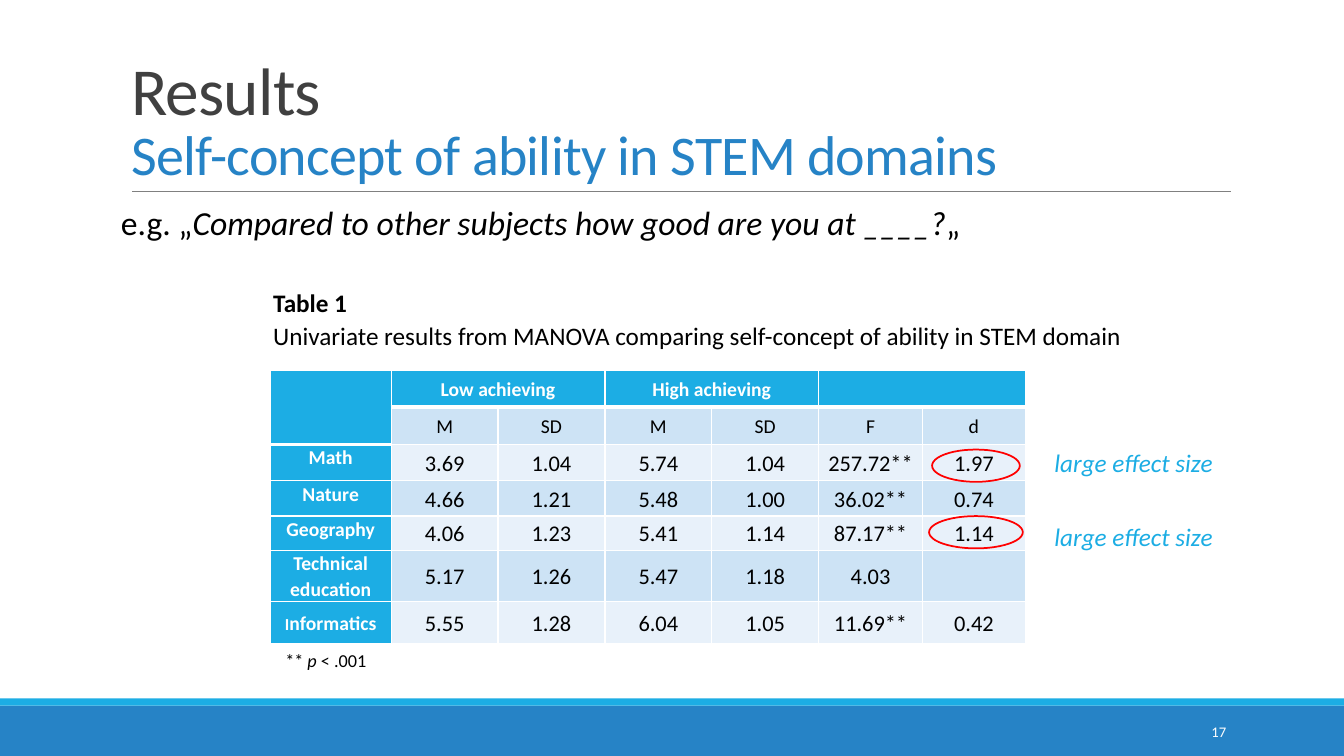
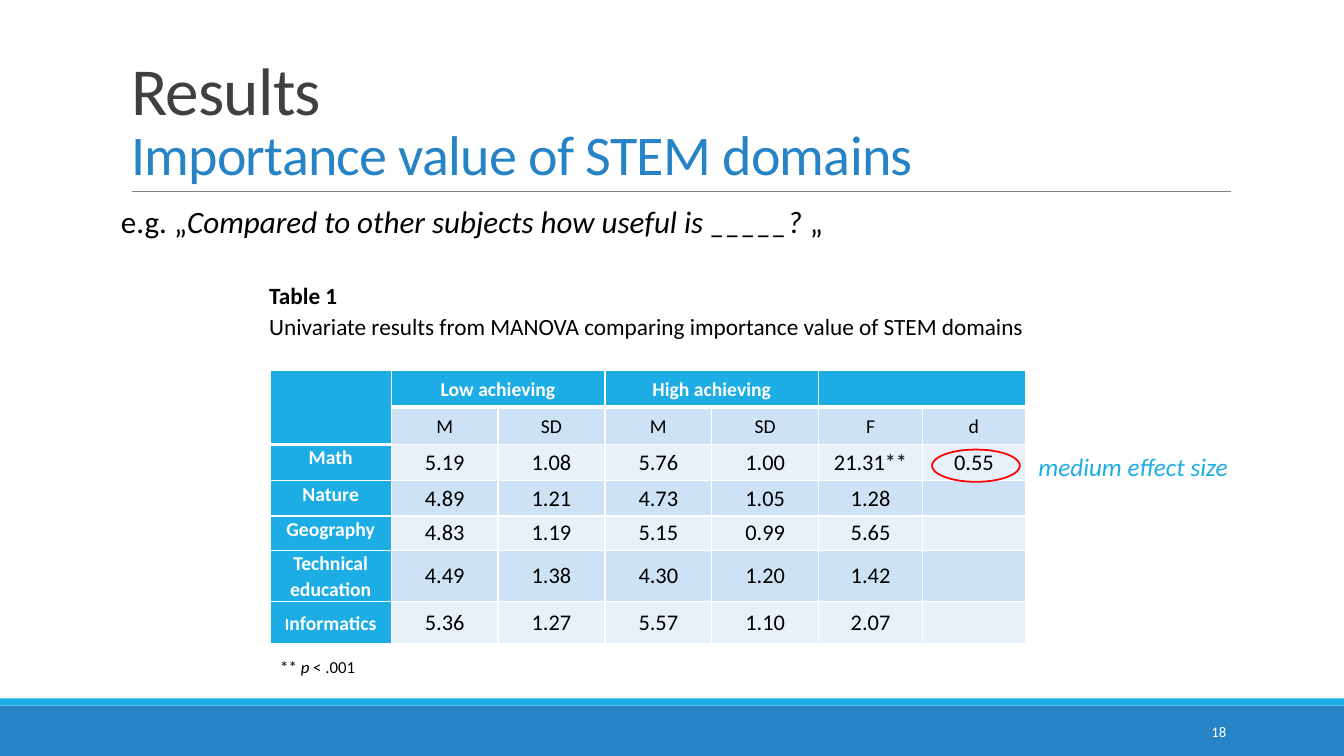
from lxml import etree
from pptx import Presentation
from pptx.dml.color import RGBColor
from pptx.enum.shapes import MSO_CONNECTOR, MSO_SHAPE
from pptx.enum.text import MSO_ANCHOR, MSO_AUTO_SIZE, PP_ALIGN
from pptx.oxml.ns import qn
from pptx.util import Inches, Pt

RECTANGLE, ELLIPSE = MSO_SHAPE.RECTANGLE, MSO_SHAPE.OVAL
STRAIGHT = MSO_CONNECTOR.STRAIGHT
TOP, MIDDLE, BOTTOM = MSO_ANCHOR.TOP, MSO_ANCHOR.MIDDLE, MSO_ANCHOR.BOTTOM
LEFT, CENTER, RIGHT = PP_ALIGN.LEFT, PP_ALIGN.CENTER, PP_ALIGN.RIGHT

# Shared style
FONT = "Calibri"
BLACK, WHITE, DARK, GREY, RED = "000000", "FFFFFF", "404040", "808080", "FF0000"
BLUE, CYAN, PALE, PALER = "2683C6", "1CADE4", "CDE3F5", "E8F1FA"
WIDTH, HEIGHT = 13.33, 7.5
BODY_LEFT = 1.2

# Table grid
TABLE_LEFT, TABLE_TOP = 2.68, 3.67
COLUMNS = [1.2, 1.06, 1.06, 1.06, 1.06, 1.03, 1.02]
ROWS = [0.37, 0.37, 0.36, 0.35, 0.34, 0.51, 0.42]
GROUPS = ["", "Low achieving", "", "High achieving", "", "", ""]
MEASURES = ["", "M", "SD", "M", "SD", "F", "d"]
DOMAINS = ["Math", "Nature", "Geography", "Technical education", "Informatics"]
RING_CENTER, RING_HEIGHT = 9.68, 0.32

RESULTS = [
    dict(
        number="17",
        subtitle="Self-concept of ability in STEM domains",
        question=("Compared to other subjects how good are you at ____?", "„"),
        caption="Univariate results from MANOVA comparing self-concept of ability in STEM domain",
        sizes=(24, 18, 13), caption_gap=30, caption_indent=1.51,
        footnote=(2.83, 6.4), spacing=1.07,
        values=["3.69 1.04 5.74 1.04 257.72** 1.97",
                "4.66 1.21 5.48 1.00 36.02** 0.74",
                "4.06 1.23 5.41 1.14 87.17** 1.14",
                "5.17 1.26 5.47 1.18 4.03",
                "5.55 1.28 6.04 1.05 11.69** 0.42"],
        rings=[(4.46, 0.87), (5.12, 0.93)],
        effects=[("large effect size", 10.36, 4.39),
                 ("large effect size", 10.36, 5.12)],
    ),
    dict(
        number="18",
        subtitle="Importance value of STEM domains",
        question=("Compared to other subjects how useful is _____? ", "„"),
        caption="Univariate results from MANOVA comparing importance value of STEM domains",
        sizes=(22.2, 16.6, 12), caption_gap=28, caption_indent=1.47,
        footnote=(2.78, 6.47), spacing=1.0,
        values=["5.19 1.08 5.76 1.00 21.31** 0.55",
                "4.89 1.21 4.73 1.05 1.28",
                "4.83 1.19 5.15 0.99 5.65",
                "4.49 1.38 4.30 1.20 1.42",
                "5.36 1.27 5.57 1.10 2.07"],
        rings=[(4.46, 0.87)],
        effects=[("medium effect size", 10.2, 4.43)],
    ),
]


def color(value):
    return RGBColor.from_string(value)


def place(shape, left, top, width, height):
    shape.left, shape.top = Inches(left), Inches(top)
    shape.width, shape.height = Inches(width), Inches(height)


def write(para, text, size=18, fill=BLACK, bold=False, italic=False, tracking=None):
    """Add a formatted span of text to a paragraph."""
    span = para.add_run()
    span.text = text
    font = span.font
    font.name, font.size, font.bold, font.italic = FONT, Pt(size), bold, italic
    font.color.rgb = color(fill)
    if tracking is not None:
        font._element.set("spc", str(int(tracking * 100)))


def format_para(para, spacing=1.0, before=0, indent=0, align=LEFT):
    para.line_spacing, para.alignment = spacing, align
    para.space_before, para.space_after = Pt(before), Pt(0)
    properties = para._p.get_or_add_pPr()
    properties.set("marL", str(Inches(indent)))
    properties.set("indent", "0")
    etree.SubElement(properties, qn("a:buNone"))


def add_box(page, left, top, width, height, anchor=TOP, margin=0.1):
    """Add a text box and return its first paragraph."""
    box = page.shapes.add_textbox(*map(Inches, (left, top, width, height)))
    frame = box.text_frame
    frame.word_wrap, frame.vertical_anchor = True, anchor
    frame.margin_left = frame.margin_right = Inches(margin)
    return frame.paragraphs[0]


def add_figure(page, kind, left, top, width, height, fill=None, line=None):
    shape = page.shapes.add_shape(kind, *map(Inches, (left, top, width, height)))
    shape.shadow.inherit = False
    if fill:
        shape.fill.solid()
        shape.fill.fore_color.rgb = color(fill)
    else:
        shape.fill.background()
    if line:
        shape.line.color.rgb = color(line)
        shape.line.width = Pt(1.25)
    else:
        shape.line.fill.background()
    return shape


def add_rule(page, left, right, height):
    rule = page.shapes.add_connector(
        STRAIGHT, Inches(left), Inches(height), Inches(right), Inches(height))
    rule.line.color.rgb = color(GREY)
    rule.line.width = Pt(0.5)
    etree.SubElement(rule.element.spPr, qn("a:effectLst"))
    return rule


def set_up_layout(layout, page):
    """Give the layout its bands, title rule and placeholder frames."""
    title, body = layout.placeholders[0], layout.placeholders[1]
    place(title, BODY_LEFT, 0.31, 11.71, 1.59)
    place(body, BODY_LEFT, 2.03, 11, 4.94)
    title.text_frame.vertical_anchor = BOTTOM
    body.text_frame.vertical_anchor = TOP
    body.text_frame.margin_left = body.text_frame.margin_right = 0
    # Layouts cannot add shapes, so they are made on a page and moved
    parts = [
        add_figure(page, RECTANGLE, 0, 7, WIDTH, 0.5, fill=BLUE),
        add_figure(page, RECTANGLE, 0, 6.93, WIDTH, 0.07, fill=CYAN),
        add_rule(page, 1.31, 12.21, 1.9),
    ]
    for index, part in enumerate(parts):
        part.element.xpath(".//p:cNvPr")[0].set("id", str(20 + index))
        layout.shapes.element.append(part.element)


def fill_title(page, subtitle):
    frame = page.shapes.title.text_frame
    frame.auto_size, frame.vertical_anchor = MSO_AUTO_SIZE.NONE, BOTTOM
    para = frame.paragraphs[0]
    format_para(para, spacing=0.85)
    write(para, "Results", 48, DARK, tracking=-0.5)
    para.add_line_break()
    write(para, subtitle, 40, BLUE, tracking=-0.5)


def fill_body(page, result):
    question_size, caption_size, _ = result["sizes"]
    frame = page.placeholders[1].text_frame
    frame.auto_size = MSO_AUTO_SIZE.NONE
    para = frame.paragraphs[0]
    format_para(para, spacing=0.8)
    question, closing = result["question"]
    write(para, "e.g. „", question_size)
    write(para, question, question_size, italic=True)
    write(para, closing, question_size)
    for text, bold, gap in [("Table 1", True, result["caption_gap"]),
                            (result["caption"], False, 0)]:
        para = frame.add_paragraph()
        format_para(para, spacing=1.1, before=gap, indent=result["caption_indent"])
        write(para, text, caption_size, bold=bold)


def heavy_below(row, column):
    """Tell whether a header cell has the thick rule under it."""
    return row == 0 or (row, column) == (1, 0)


def set_borders(cell, row, column):
    widths = {"L": 1, "R": 1,
              "T": 3 if heavy_below(row - 1, column) else 1,
              "B": 3 if heavy_below(row, column) else 1}
    properties = cell._tc.get_or_add_tcPr()
    for side, width in widths.items():
        line = etree.SubElement(properties, qn("a:ln" + side), w=str(Pt(width)))
        solid = etree.SubElement(line, qn("a:solidFill"))
        etree.SubElement(solid, qn("a:srgbClr"), val=WHITE)


def fill_cell(cell, text, row, column, spacing):
    header = row == 0 or column == 0
    set_borders(cell, row, column)
    cell.fill.solid()
    cell.fill.fore_color.rgb = color(CYAN if header else PALE if row % 2 else PALER)
    cell.margin_left = cell.margin_right = Inches(0.07)
    cell.margin_top = cell.margin_bottom = 0
    top_label = column == 0 and 2 <= row < len(ROWS) - 1
    cell.vertical_anchor = TOP if top_label else MIDDLE
    para = cell.text_frame.paragraphs[0]
    para.alignment = CENTER
    number = row > 1 and column > 0
    para.line_spacing = spacing if number else 1.07
    if text == "Informatics":
        # The initial is set smaller than the rest
        write(para, text[0], 12, WHITE, bold=True)
        text = text[1:]
    if text:
        write(para, text, 16 if number else 14, WHITE if header else BLACK, bold=header)


def add_results_table(page, values, spacing):
    frame = page.shapes.add_table(
        len(ROWS), len(COLUMNS), Inches(TABLE_LEFT), Inches(TABLE_TOP),
        Inches(sum(COLUMNS)), Inches(sum(ROWS)))
    table = frame.table
    table.first_row = table.horz_banding = False
    for column, width in zip(table.columns, COLUMNS):
        column.width = Inches(width)
    for row, height in zip(table.rows, ROWS):
        row.height = Inches(height)
    content = [GROUPS, MEASURES]
    for domain, numbers in zip(DOMAINS, values):
        cells = [domain] + numbers.split()
        content.append(cells + [""] * (len(COLUMNS) - len(cells)))
    for row, texts in enumerate(content):
        for column, text in enumerate(texts):
            fill_cell(table.cell(row, column), text, row, column, spacing)
    table.cell(0, 0).merge(table.cell(1, 0))
    for column in (1, 3, 5):
        table.cell(0, column).merge(table.cell(0, column + 1))


def add_footnote(page, left, top, size):
    para = add_box(page, left, top, 2, 0.3, MIDDLE, margin=0)
    write(para, "** ", size)
    write(para, "p", size, italic=True)
    write(para, " < .001", size)


def add_result_page(page, result):
    fill_title(page, result["subtitle"])
    fill_body(page, result)
    add_results_table(page, result["values"], result["spacing"])
    add_footnote(page, *result["footnote"], result["sizes"][2])
    # Effect sizes
    for top, width in result["rings"]:
        add_figure(page, ELLIPSE, RING_CENTER - width / 2, top, width, RING_HEIGHT, line=RED)
    for text, left, top in result["effects"]:
        write(add_box(page, left, top, 2.28, 0.4), text, 18, CYAN, italic=True)
    # Page number
    para = add_box(page, 10.83, 7.06, 1.43, 0.4, MIDDLE)
    para.alignment = RIGHT
    write(para, result["number"], 10.5, WHITE)


def main():
    deck = Presentation()
    deck.slide_width, deck.slide_height = Inches(WIDTH), Inches(HEIGHT)
    layout = deck.slide_layouts[1]
    pages = [deck.slides.add_slide(layout) for _ in RESULTS]
    set_up_layout(layout, pages[0])
    for page, result in zip(pages, RESULTS):
        add_result_page(page, result)
    deck.save("out.pptx")


if __name__ == "__main__":
    main()
